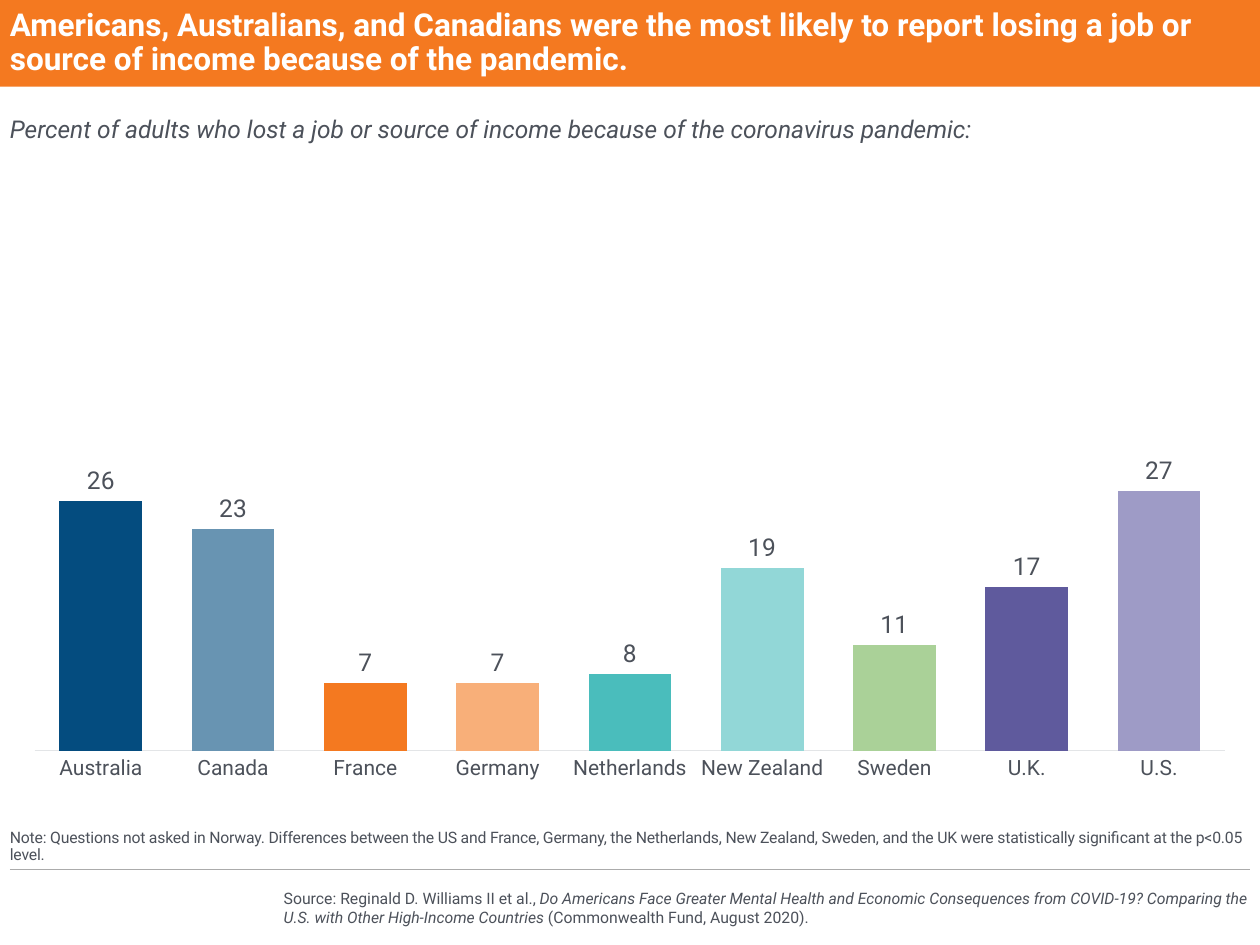
import pptx
import pptx.chart.data
import pptx.dml.color
import pptx.enum.chart
import pptx.enum.shapes
import pptx.enum.text
import pptx.oxml
import pptx.oxml.ns
import pptx.util

Cm = pptx.util.Cm
Pt = pptx.util.Pt
RGBColor = pptx.dml.color.RGBColor
Anchor = pptx.enum.text.MSO_ANCHOR

FONT = "Roboto"
WHITE = RGBColor(0xFF, 0xFF, 0xFF)
ORANGE = RGBColor(0xF4, 0x79, 0x20)
TEXT_GREY = RGBColor(0x4C, 0x51, 0x5A)
RULE_GREY = RGBColor(0xAB, 0xAB, 0xAB)
AXIS_GREY = RGBColor(0xE3, 0xE5, 0xE7)

MARGIN = Cm(0.2)
CONTENT_WIDTH = Cm(25)
BANNER_HEIGHT = Cm(1.75)

JOB_LOSS = [
    ("Australia", 26, RGBColor(0x04, 0x4C, 0x7F)),
    ("Canada", 23, RGBColor(0x68, 0x94, 0xB2)),
    ("France", 7, ORANGE),
    ("Germany", 7, RGBColor(0xF8, 0xAF, 0x79)),
    ("Netherlands", 8, RGBColor(0x4A, 0xBD, 0xBC)),
    ("New Zealand", 19, RGBColor(0x92, 0xD7, 0xD7)),
    ("Sweden", 11, RGBColor(0xAA, 0xD1, 0x98)),
    ("U.K.", 17, RGBColor(0x5F, 0x5A, 0x9D)),
    ("U.S.", 27, RGBColor(0x9E, 0x9B, 0xC6)),
]


def style_font(font, size, color=TEXT_GREY, bold=False, italic=False):
    font.name = FONT
    font.size = Pt(size)
    font.color.rgb = color
    font.bold = bold
    font.italic = italic


def add_banner(slide, width):
    banner = slide.shapes.add_shape(
        pptx.enum.shapes.MSO_SHAPE.RECTANGLE, 0, 0, width, BANNER_HEIGHT)
    banner.shadow.inherit = False
    banner.fill.solid()
    banner.fill.fore_color.rgb = ORANGE
    banner.line.fill.background()


def add_rule(slide, top):
    rule = slide.shapes.add_connector(
        pptx.enum.shapes.MSO_CONNECTOR.STRAIGHT,
        MARGIN, top, MARGIN + CONTENT_WIDTH, top)
    rule.line.color.rgb = RULE_GREY
    rule.line.width = Pt(0.75)
    properties = rule._element.spPr
    properties.append(pptx.oxml.parse_xml(
        f"<a:effectLst {pptx.oxml.ns.nsdecls('a')}/>"))


def add_text(slide, left, top, width, height, runs, size, color=TEXT_GREY,
             bold=False, anchor=Anchor.TOP, line_spacing=None, tracking=None):
    box = slide.shapes.add_textbox(left, top, width, height)
    frame = box.text_frame
    frame.word_wrap = True
    frame.vertical_anchor = anchor
    frame.margin_left = frame.margin_right = 0
    frame.margin_top = frame.margin_bottom = 0
    paragraph = frame.paragraphs[0]
    paragraph.line_spacing = line_spacing
    for text, italic in runs:
        run = paragraph.add_run()
        run.text = text
        style_font(run.font, size, color, bold, italic)
        if tracking is not None:
            run._r.get_or_add_rPr().set("spc", str(round(tracking * 100)))
    return paragraph


def set_plot_layout(chart, x, y, w, h):
    plot_area = chart._chartSpace.chart.plotArea
    for layout in plot_area.findall(pptx.oxml.ns.qn("c:layout")):
        plot_area.remove(layout)
    sizes = "".join(f'<c:{name} val="{value}"/>'
                    for name, value in zip("xywh", (x, y, w, h)))
    plot_area.insert(0, pptx.oxml.parse_xml(
        f"<c:layout {pptx.oxml.ns.nsdecls('c')}><c:manualLayout>"
        '<c:layoutTarget val="inner"/><c:xMode val="edge"/>'
        f'<c:yMode val="edge"/>{sizes}</c:manualLayout></c:layout>'))


def style_axes(chart):
    tick_mark = pptx.enum.chart.XL_TICK_MARK
    categories = chart.category_axis
    categories.major_tick_mark = tick_mark.NONE
    categories.minor_tick_mark = tick_mark.NONE
    categories.format.line.color.rgb = AXIS_GREY
    categories.format.line.width = Pt(0.75)
    style_font(categories.tick_labels.font, 12)
    values = chart.value_axis
    values.minimum_scale = 0
    values.maximum_scale = 60
    values.has_major_gridlines = False
    values.visible = False


def add_job_loss_chart(slide):
    data = pptx.chart.data.CategoryChartData()
    data.categories = [country for country, _, _ in JOB_LOSS]
    data.add_series("Series 1", [percent for _, percent, _ in JOB_LOSS])
    chart = slide.shapes.add_chart(
        pptx.enum.chart.XL_CHART_TYPE.COLUMN_CLUSTERED,
        MARGIN, Cm(3.25), CONTENT_WIDTH, Cm(12.78), data).chart
    chart.has_legend = False
    chart.has_title = False
    style_font(chart.font, 14)
    style_axes(chart)
    set_plot_layout(chart, 0.02, 0.02, 0.96, 0.91)

    plot = chart.plots[0]
    plot.gap_width = 60
    plot.vary_by_categories = False
    series = plot.series[0]
    series.format.fill.solid()
    series.format.fill.fore_color.rgb = JOB_LOSS[0][2]
    for index, (_, _, color) in enumerate(JOB_LOSS):
        fill = series.points[index].format.fill
        fill.solid()
        fill.fore_color.rgb = color
    labels = series.data_labels
    labels.show_value = True
    labels.number_format = "General"
    labels.number_format_is_linked = False
    labels.position = pptx.enum.chart.XL_LABEL_POSITION.OUTSIDE_END
    style_font(labels.font, 14)


def main():
    presentation = pptx.Presentation()
    presentation.slide_width = Cm(25.4)
    presentation.slide_height = Cm(19.05)
    slide = presentation.slides.add_slide(presentation.slide_layouts[6])

    add_rule(slide, Cm(17.53))
    add_banner(slide, presentation.slide_width)
    add_text(slide, Cm(5.72), Cm(17.91), Cm(19.48), Cm(0.76), [
        ("Source: Reginald D. Williams II et al., ", False),
        ("Do Americans Face Greater Mental Health and Economic Consequences "
         "from COVID-19? Comparing the U.S. with Other High-Income Countries ",
         True),
        ("(Commonwealth Fund, August 2020).", False),
    ], 9, anchor=Anchor.MIDDLE)
    note = add_text(slide, MARGIN, Cm(16.05), CONTENT_WIDTH, Cm(1.37), [
        ("Note: Questions not asked in Norway. Differences between the US and "
         "France, Germany, the Netherlands, New Zealand, Sweden, and the UK "
         "were statistically significant at the p<0.05 level.", False),
    ], 9, anchor=Anchor.BOTTOM, line_spacing=0.9, tracking=-0.1)
    note.space_after = Pt(6)
    add_text(slide, MARGIN, 0, CONTENT_WIDTH, BANNER_HEIGHT, [
        ("Americans, Australians, and Canadians were the most likely to "
         "report losing a job or source of income because of the pandemic.",
         False),
    ], 18, WHITE, bold=True, anchor=Anchor.MIDDLE, line_spacing=0.9)
    add_text(slide, MARGIN, Cm(2.29), Cm(20.19), Cm(0.61), [
        ("Percent of adults who lost a job or source of income because of "
         "the coronavirus pandemic:", True),
    ], 14)
    add_job_loss_chart(slide)
    presentation.save("out.pptx")


if __name__ == "__main__":
    main()
